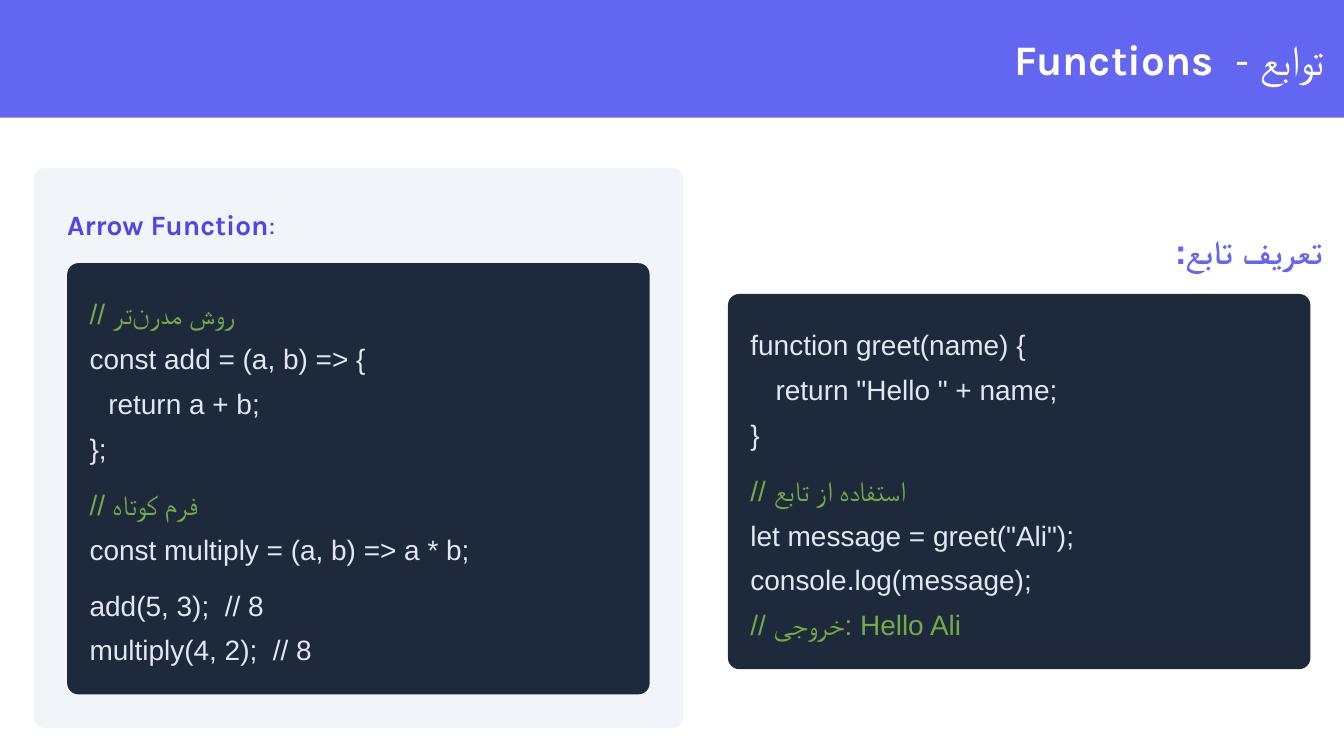
from lxml.etree import SubElement
from pptx import Presentation
from pptx.dml.color import RGBColor
from pptx.enum.shapes import MSO_SHAPE
from pptx.enum.text import MSO_ANCHOR, MSO_AUTO_SIZE, PP_ALIGN
from pptx.oxml.ns import qn
from pptx.util import Pt

WHITE = RGBColor(0xFF, 0xFF, 0xFF)
INDIGO = RGBColor(0x63, 0x66, 0xF1)
DEEP_INDIGO = RGBColor(0x4F, 0x46, 0xE5)
CARD = RGBColor(0xF1, 0xF5, 0xF9)
NAVY = RGBColor(0x1E, 0x29, 0x3B)
CODE = RGBColor(0xE2, 0xE8, 0xF0)
COMMENT = RGBColor(0x70, 0xAD, 0x47)

COMPARISON_LAYOUT = 4
LEFT_HEADING, LEFT_CODE, RIGHT_HEADING, RIGHT_CODE = 1, 2, 3, 4
NON_JOINER = chr(0x200C)  # Persian half-space

# Each inner list is a group of lines; a wider gap parts the groups.
ARROW_CODE = [
    [f"// روش مدرن{NON_JOINER}تر", "const add = (a, b) => {",
     "  return a + b;", "};"],
    ["// فرم کوتاه", "const multiply = (a, b) => a * b;"],
    ["add(5, 3);  // 8", "multiply(4, 2);  // 8"],
]
GREET_CODE = [
    ["function greet(name) {", '  return "Hello " + name;', "}"],
    ["// استفاده از تابع", 'let message = greet("Ali");',
     "console.log(message);", "// خروجی: Hello Ali"],
]


def add_span(para, text, size=15, font="Arial", color=CODE, bold=False):
    span = para.add_run()
    span.text = text
    span.font.size = Pt(size)
    span.font.name = font
    span.font.color.rgb = color
    span.font.bold = bold


def format_para(para, line=21, before=0, indent=0, rtl=False):
    """Set spacing and direction, and drop the inherited bullet."""
    para.alignment = PP_ALIGN.RIGHT if rtl else PP_ALIGN.LEFT
    para.line_spacing = Pt(line)
    para.space_before = Pt(before)
    para.space_after = Pt(0)
    properties = para._p.get_or_add_pPr()
    properties.set("marL", str(Pt(indent)))
    properties.set("indent", "0")
    properties.set("rtl", str(int(rtl)))
    SubElement(properties, qn("a:buNone"))


class SlideBuilder:
    radius = 6
    code_inset_x = 12
    code_inset_y = 15

    def __init__(self, page):
        self.page = page

    def panel(self, left, top, width, height, color, rounded=True):
        kind = MSO_SHAPE.ROUNDED_RECTANGLE if rounded else MSO_SHAPE.RECTANGLE
        box = self.page.shapes.add_shape(
            kind, Pt(left), Pt(top), Pt(width), Pt(height))
        if rounded:
            box.adjustments[0] = self.radius / min(width, height)
        box.shadow.inherit = False
        box.fill.solid()
        box.fill.fore_color.rgb = color
        box.line.fill.background()

    def place(self, box, left, top, width, height):
        """Move a placeholder to the front and return its bare text frame."""
        box.left, box.top = Pt(left), Pt(top)
        box.width, box.height = Pt(width), Pt(height)
        box._element.getparent().append(box._element)
        frame = box.text_frame
        frame.margin_left = frame.margin_right = 0
        frame.margin_top = frame.margin_bottom = 0
        frame.vertical_anchor = MSO_ANCHOR.TOP
        frame.auto_size = MSO_AUTO_SIZE.NONE
        frame.word_wrap = True
        return frame

    def heading(self, box, left, top, width, line, spans, rtl=False):
        para = self.place(box, left, top, width, line).paragraphs[0]
        format_para(para, line=line, rtl=rtl)
        for text, style in spans:
            add_span(para, text, **style)

    def code(self, box, left, top, width, height, groups, indent):
        self.panel(left, top, width, height, NAVY)
        frame = self.place(
            box, left + self.code_inset_x, top + self.code_inset_y,
            width - 1.5 * self.code_inset_x, height - 2 * self.code_inset_y)
        for group_number, group in enumerate(groups):
            for line_number, text in enumerate(group):
                first = group_number == line_number == 0
                para = frame.paragraphs[0] if first else frame.add_paragraph()
                before = 0 if first else 3 if line_number else 9
                format_para(para, before=before,
                            indent=indent if text.startswith(" ") else 0)
                add_span(para, text.lstrip(),
                         color=COMMENT if text.startswith("//") else CODE)


def main():
    deck = Presentation()
    deck.slide_width, deck.slide_height = Pt(720), Pt(405)
    page = deck.slides.add_slide(deck.slide_layouts[COMPARISON_LAYOUT])
    holders = {box.placeholder_format.idx: box for box in page.placeholders}
    for index in set(holders) - {0, LEFT_HEADING, LEFT_CODE,
                                 RIGHT_HEADING, RIGHT_CODE}:
        extra = holders[index]._element
        extra.getparent().remove(extra)
    builder = SlideBuilder(page)

    builder.panel(0, 0, 720, 63, INDIGO, rounded=False)
    title_style = dict(size=22.5, font="Karla", color=WHITE)
    builder.heading(page.shapes.title, 359, 18, 350, 27, [
        ("توابع -  ", title_style),
        ("Functions", dict(title_style, bold=True)),
    ], rtl=True)

    builder.heading(holders[RIGHT_HEADING], 390, 121.5, 318.5, 24, [
        ("تعریف تابع:", dict(size=18, color=INDIGO, bold=True)),
    ], rtl=True)
    builder.code(holders[RIGHT_CODE], 390, 157.5, 312, 201, GREET_CODE, 13.5)

    builder.panel(18, 90, 348, 300, CARD)
    arrow_style = dict(font="Karla", color=DEEP_INDIGO)
    builder.heading(holders[LEFT_HEADING], 36, 108, 318, 21, [
        ("Arrow Function", dict(arrow_style, bold=True)),
        (":", arrow_style),
    ])
    builder.code(holders[LEFT_CODE], 36, 141, 312, 231, ARROW_CODE, 10)

    deck.save("out.pptx")


if __name__ == "__main__":
    main()
